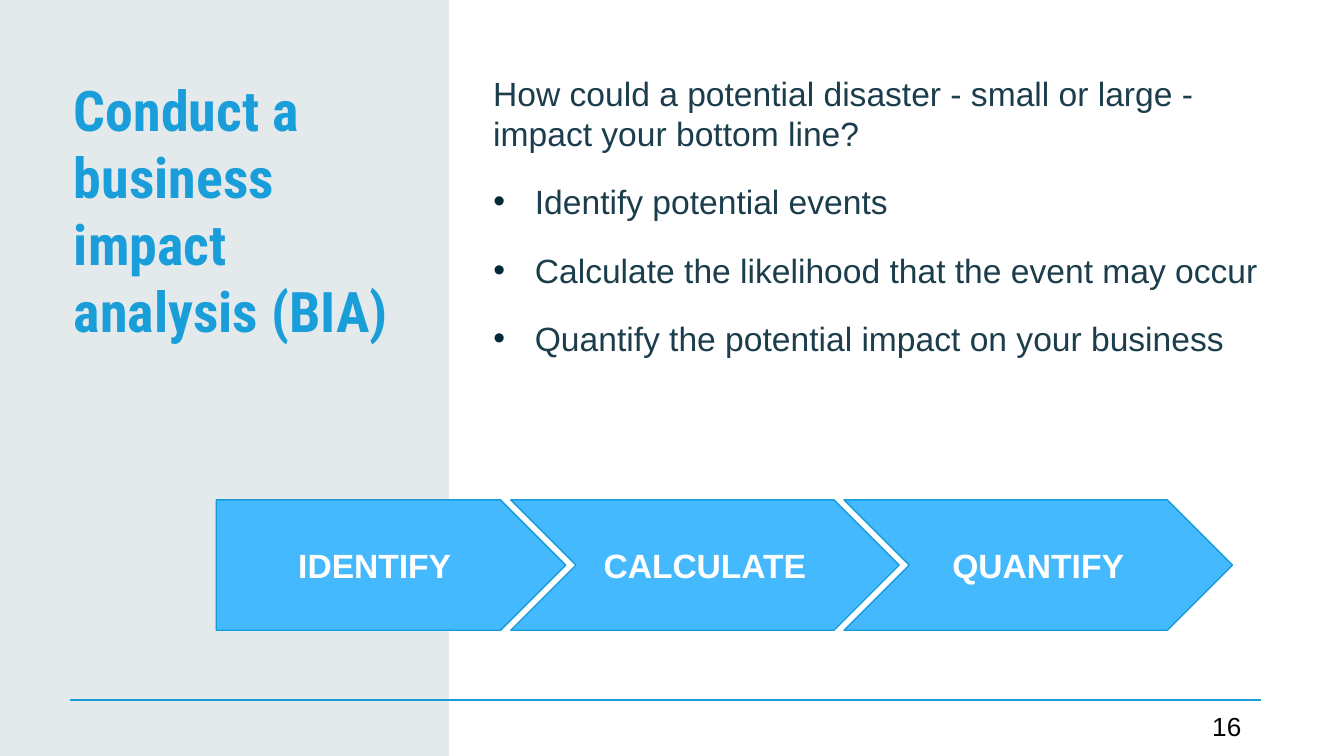
from lxml import etree
from pptx import Presentation
from pptx.dml.color import RGBColor
from pptx.enum.shapes import MSO_CONNECTOR as CONN, MSO_SHAPE as SHAPE
from pptx.enum.text import MSO_ANCHOR as ANCHOR, MSO_AUTO_SIZE as AUTO, PP_ALIGN as ALIGN
from pptx.oxml.ns import qn
from pptx.util import Inches, Pt

COLORS = {
    "panel": "E4E9EB", "rule": "199ED9", "title": "1A9ED9", "body": "1C3E4C",
    "bullet": "002A3A", "step": "45B9FE", "edge": "159CD9",
    "white": "FFFFFF", "black": "000000",
}


def rgb(name):
    return RGBColor.from_string(COLORS[name])


def add_text(p, text, size=18, color="body", font="Arial", bold=False,
             align=ALIGN.LEFT, after=0):
    p.alignment = align
    p.space_after = Pt(after)
    r = p.add_run()
    r.text = text
    r.font.name = font
    r.font.size = Pt(size)
    r.font.bold = bold
    r.font.color.rgb = rgb(color)


def set_bullet(p, left, hanging):
    pPr = p._p.get_or_add_pPr()
    pPr.set("marL", str(Inches(left)))
    pPr.set("indent", str(Inches(-hanging)))
    if hanging:
        color = etree.SubElement(pPr, qn("a:buClr"))
        etree.SubElement(color, qn("a:srgbClr"), val=COLORS["bullet"])
        etree.SubElement(pPr, qn("a:buFont"), typeface="Arial")
        etree.SubElement(pPr, qn("a:buChar"), char="•")


class Deck:
    def __init__(self, width, height):
        self.prs = Presentation()
        self.prs.slide_width = Inches(width)
        self.prs.slide_height = Inches(height)
        self.s = self.prs.slides.add_slide(self.prs.slide_layouts[5])

    def frame(self, sp, anchor=ANCHOR.TOP, inset_x=0.04, inset_y=0.04):
        tf = sp.text_frame
        tf.word_wrap = True
        tf.auto_size = AUTO.NONE
        tf.vertical_anchor = anchor
        tf.margin_left = tf.margin_right = Inches(inset_x)
        tf.margin_top = tf.margin_bottom = Inches(inset_y)
        return tf

    def title(self, text, x, y, w, h):
        sp = self.s.shapes.title
        sp.left, sp.top, sp.width, sp.height = map(Inches, (x, y, w, h))
        add_text(self.frame(sp).paragraphs[0], text, size=30, color="title",
                 font="Roboto Condensed", bold=True)
        self.s.shapes._spTree.append(sp._element)

    def text_box(self, x, y, w, h, **frame_format):
        sp = self.s.shapes.add_textbox(*map(Inches, (x, y, w, h)))
        return self.frame(sp, **frame_format)

    def body(self, intro, bullets, x, y, w, h):
        tf = self.text_box(x, y, w, h)
        for i, text in enumerate([intro, *bullets]):
            p = tf.add_paragraph() if i else tf.paragraphs[0]
            set_bullet(p, *((0.44, 0.31) if i else (0.13, 0)))
            add_text(p, text, after=15)

    def shape(self, kind, x, y, w, h, fill, line=None):
        sp = self.s.shapes.add_shape(kind, *map(Inches, (x, y, w, h)))
        sp.shadow.inherit = False
        sp.fill.solid()
        sp.fill.fore_color.rgb = rgb(fill)
        if line:
            sp.line.color.rgb = rgb(line)
            sp.line.width = Pt(0.75)
        else:
            sp.line.fill.background()
        return sp

    def step(self, kind, text, x, y, w, h):
        sp = self.shape(kind, x, y, w, h, "step", "edge")
        tf = self.frame(sp, ANCHOR.MIDDLE, 0.1, 0.05)
        add_text(tf.paragraphs[0], text, color="white", bold=True, align=ALIGN.CENTER)

    def rule(self, x1, x2, y):
        line = self.s.shapes.add_connector(CONN.STRAIGHT, *map(Inches, (x1, y, x2, y)))
        line.line.color.rgb = rgb("rule")
        line.line.width = Pt(1)
        etree.SubElement(line._element.spPr, qn("a:effectLst"))

    def page_number(self, text, x, y, w, h):
        tf = self.text_box(x, y, w, h, anchor=ANCHOR.MIDDLE, inset_y=0.02)
        add_text(tf.paragraphs[0], text, size=14, color="black")


def main():
    width = 10
    height = width * 9 / 16
    deck = Deck(width, height)
    deck.shape(SHAPE.RECTANGLE, 0, 0, 3.34, height, "panel")
    deck.rule(0.52, 9.38, 5.21)
    deck.page_number("16", 8.98, 5.31, 0.4, 0.19)
    deck.body(
        "How could a potential disaster - small or large - impact your bottom line?",
        ["Identify potential events",
         "Calculate the likelihood that the event may occur",
         "Quantify the potential impact on your business"],
        3.5, 0.5, 6, 2.87)
    deck.title("Conduct a business impact analysis (BIA)", 0.51, 0.52, 2.67, 2.57)

    top, step_height, step_width, pitch = 3.72, 0.97, 2.89, 2.48
    deck.step(SHAPE.PENTAGON, "IDENTIFY", 1.61, top, 2.6, step_height)
    for i, text in enumerate(["CALCULATE", "QUANTIFY"]):
        deck.step(SHAPE.CHEVRON, text, 3.8 + i * pitch, top, step_width, step_height)

    deck.prs.save("out.pptx")


if __name__ == "__main__":
    main()
